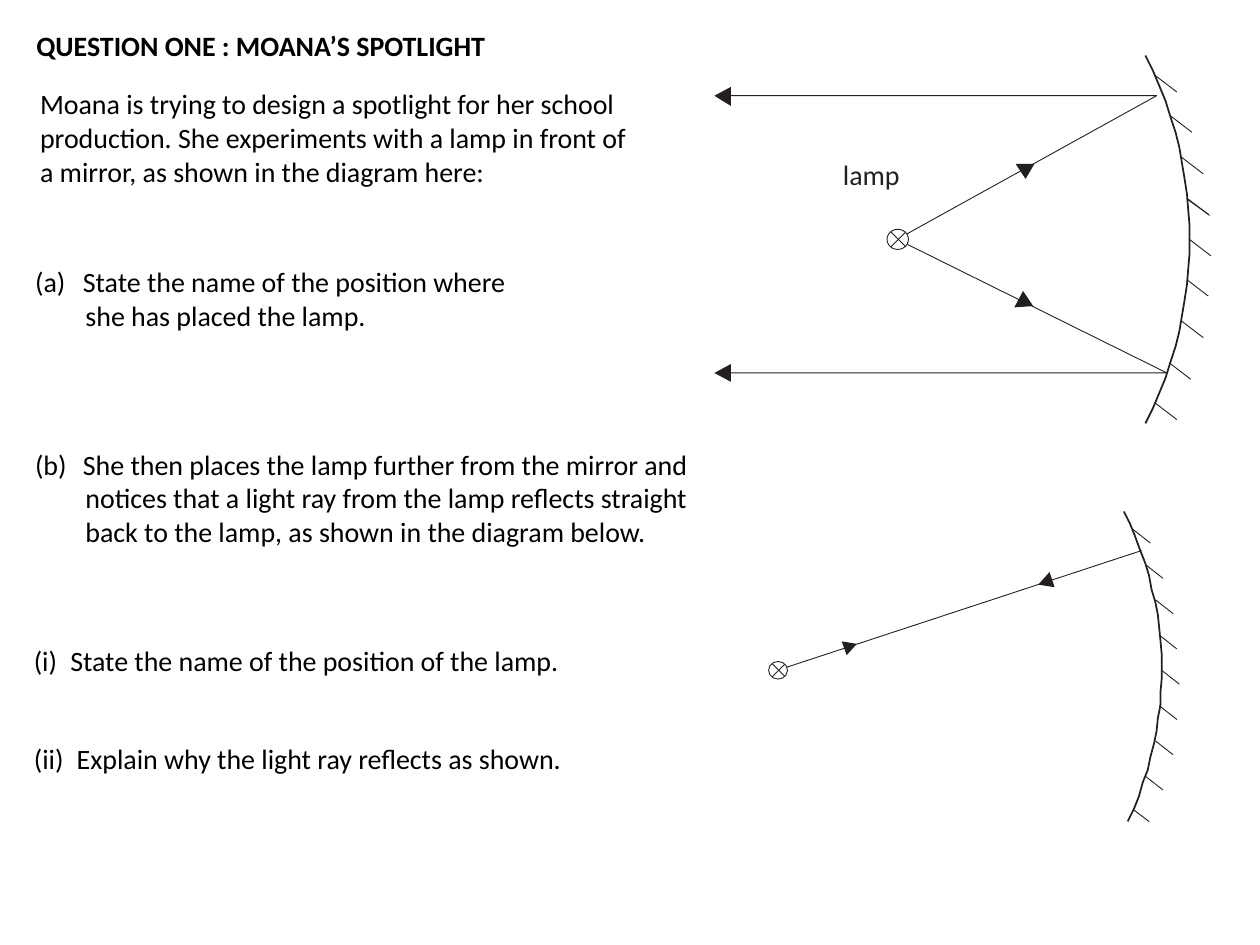
import math

import pptx
import pptx.dml.color
import pptx.enum.shapes
import pptx.enum.text
import pptx.oxml
import pptx.oxml.ns
import pptx.util

PX = 9144  # EMU per px, 100 px to the inch
INK, BLACK, WHITE = "231F20", "000000", "FFFFFF"


def color(hex_text):
    return pptx.dml.color.RGBColor.from_string(hex_text)


def add_text(para, text, size=16, font="Calibri", ink=BLACK, bold=None):
    span = para.add_run()
    span.text = text
    span.font.size = pptx.util.Pt(size)
    span.font.name = font
    span.font.bold = bold
    span.font.color.rgb = color(ink)


def indent(para, margin, first=0, number=None):
    """Set the left margin and first-line offset; number gives an (a), (b) label."""
    props = para._p.get_or_add_pPr()
    props.set("marL", str(margin * PX))
    props.set("indent", str(first * PX))
    if number:
        label = pptx.oxml.parse_xml(
            f'<a:buAutoNum {pptx.oxml.ns.nsdecls("a")} '
            f'type="alphaLcParenBoth" startAt="{number}"/>')
        props.append(label)


class Worksheet:
    def __init__(self, page):
        self.page = page
        self.shapes = page.shapes

    def start_group(self):
        self.shapes = self.page.shapes.add_group_shape().shapes

    def end_group(self):
        self.shapes = self.page.shapes

    def textbox(self, x, y, w, h, lines, wrap=True, inset=None, **style):
        box = self.shapes.add_textbox(x * PX, y * PX, w * PX, h * PX)
        frame = box.text_frame
        frame.word_wrap = wrap
        if inset is None:
            frame.auto_size = pptx.enum.text.MSO_AUTO_SIZE.SHAPE_TO_FIT_TEXT
        else:
            frame.margin_left = frame.margin_right = inset * PX
            frame.margin_top = frame.margin_bottom = inset * PX
        for i, line in enumerate(lines):
            para = frame.add_paragraph() if i else frame.paragraphs[0]
            add_text(para, line, **style)
        return frame.paragraphs

    def question(self, x, y, w, h, number, lines):
        first, *rest = self.textbox(x, y, w, h, lines)
        indent(first, 38, -38, number)
        for para in rest:
            indent(para, 40)

    def line(self, x1, y1, x2, y2, width=0.5):
        straight = pptx.enum.shapes.MSO_CONNECTOR.STRAIGHT
        line = self.shapes.add_connector(straight, x1 * PX, y1 * PX, x2 * PX, y2 * PX)
        line.line.color.rgb = color(INK)
        line.line.width = pptx.util.Pt(width)
        line._element.spPr.append(
            pptx.oxml.parse_xml(f'<a:effectLst {pptx.oxml.ns.nsdecls("a")}/>'))

    def outline(self, points, fill=None, width=None):
        (x, y), *rest = points
        builder = self.shapes.build_freeform(x, y, scale=PX)
        builder.add_line_segments(rest, close=fill is not None)
        self.paint(builder.convert_to_shape(), fill, width)

    def paint(self, shape, fill, width):
        shape.shadow.inherit = False
        if fill:
            shape.fill.solid()
            shape.fill.fore_color.rgb = color(fill)
        else:
            shape.fill.background()
        if width:
            shape.line.color.rgb = color(INK)
            shape.line.width = pptx.util.Pt(width)
        else:
            shape.line.fill.background()

    def lamp(self, x, y, w, h, cross):
        oval = self.shapes.add_shape(
            pptx.enum.shapes.MSO_SHAPE.OVAL, x * PX, y * PX, w * PX, h * PX)
        self.paint(oval, WHITE, 0.5)
        left, top, size = cross
        self.line(left, top + size, left + size, top)
        self.line(left + size, top + size, left, top)

    def mirror(self, apex, radius, top, bottom, steps=24):
        """Draw a circular arc whose rightmost point is the apex."""
        x, y = apex
        points = []
        for i in range(steps + 1):
            across = top + (bottom - top) * i / steps
            sag = radius - math.sqrt(radius ** 2 - (across - y) ** 2)
            points.append((round(x - sag, 2), round(across, 2)))
        self.outline(points, width=1)

    def ticks(self, lefts, top, step, w, h):
        for i, x in enumerate(lefts):
            y = round(top + i * step)
            self.line(x, y, x + w, y + h)


def main():
    deck = pptx.Presentation()
    deck.slide_width, deck.slide_height = 1000 * PX, 750 * PX
    sheet = Worksheet(deck.slides.add_slide(deck.slide_layouts[6]))

    # Heading and introduction
    sheet.textbox(19, 18, 381, 37, ["QUESTION ONE : MOANA’S SPOTLIGHT"],
                  wrap=False, bold=True)
    sheet.textbox(22, 64, 500, 91, [
        "Moana is trying to design a spotlight for her school production. "
        "She experiments with a lamp in front of a mirror, "
        "as shown in the diagram here:"])

    # Upper diagram: parallel reflected rays
    sheet.start_group()
    sheet.outline([(577, 76), (918, 76), (712, 190), (926, 296), (577, 296)], width=0.5)
    for head in ([(580, 69), (567, 76), (580, 84)],
                 [(580, 289), (567, 296), (580, 303)],
                 [(806, 130), (814, 142), (821, 130)],
                 [(812, 231), (805, 244), (820, 243)]):
        sheet.outline(head, fill=INK)
    sheet.lamp(704, 182, 17, 16, cross=(707, 184, 12))
    sheet.ticks([917, 929, 938, 943, 944, 942, 938, 928, 917], 60, 32.5, 17, 13)
    sheet.line(942, 158, 959, 170)
    sheet.mirror(apex=(944, 190), radius=322, top=44, bottom=336)
    sheet.textbox(669, 125, 60, 29, ["lamp"], inset=0, ink=INK)
    sheet.end_group()

    # Questions (a) and (b)
    sheet.question(18, 205, 421, 64, 1, [
        "State the name of the position where",
        "she has placed the lamp."])
    sheet.question(18, 350, 553, 91, 2, [
        "She then places the lamp further from the mirror and",
        "notices that a light ray from the lamp reflects straight",
        "back to the lamp, as shown in the diagram below."])

    # Lower diagram: ray returning to the lamp
    sheet.start_group()
    sheet.line(906, 437, 617, 532)
    for head in ([(668, 509), (672, 520), (680, 511)],
                 [(833, 454), (824, 464), (837, 466)]):
        sheet.outline(head, fill=INK)
    sheet.ticks([899, 909, 917, 920, 922, 920, 917, 909], 420, 28, 14, 11)
    sheet.line(900, 643, 912, 652)
    sheet.lamp(610, 525, 15, 14, cross=(613, 527, 10))
    sheet.mirror(apex=(922, 532), radius=280, top=406, bottom=652)
    sheet.end_group()

    # Parts (i) and (ii)
    para, = sheet.textbox(17, 506, 500, 37, [
        "(i)\tState the name of the position of the lamp."])
    indent(para, 29, -29)
    para, = sheet.textbox(-33, 584, 511, 37, [
        "(ii)\tExplain why the light ray reflects as shown."])
    indent(para, 84, -34)

    deck.save("out.pptx")


if __name__ == "__main__":
    main()
